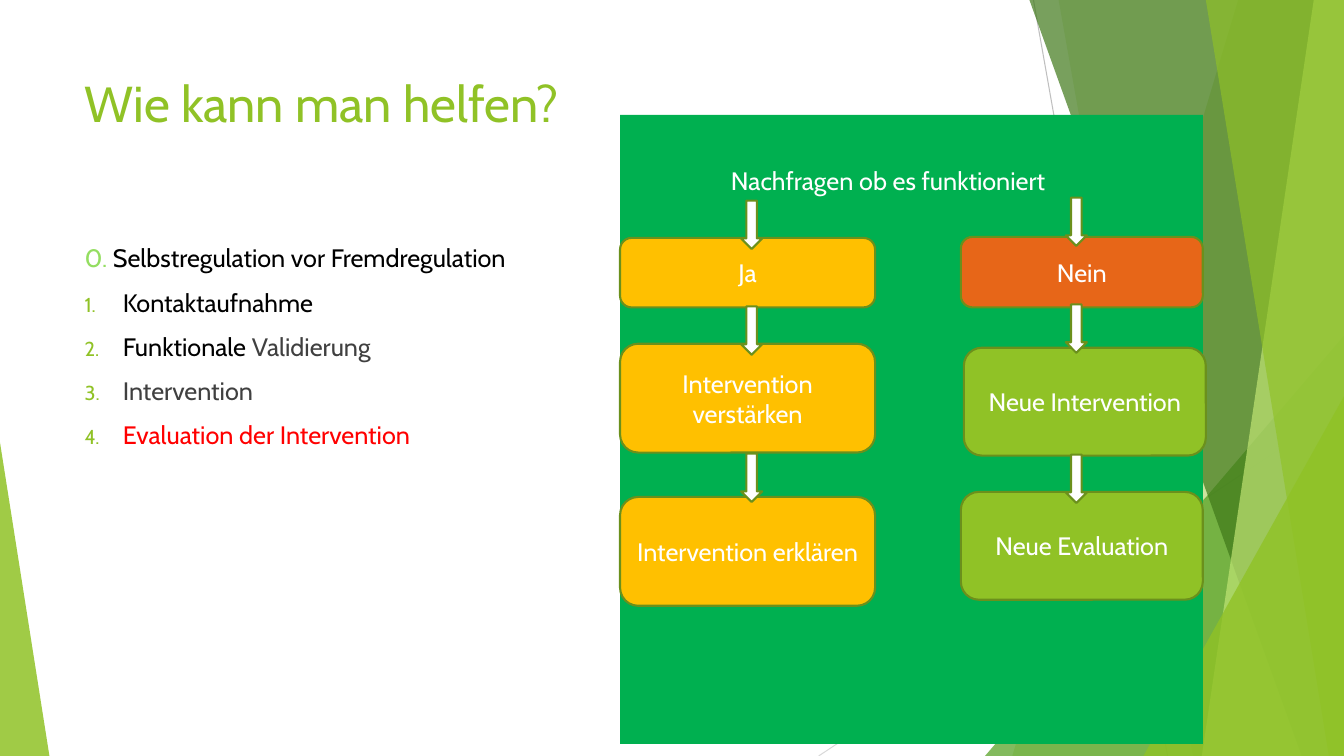
from pptx import Presentation
from pptx.dml.color import RGBColor
from pptx.enum.shapes import MSO_CONNECTOR as CONNECTOR, MSO_SHAPE as SHAPE
from pptx.enum.text import MSO_ANCHOR as ANCHOR, PP_ALIGN as ALIGN
from pptx.oxml.ns import qn
from pptx.util import Inches, Pt
from lxml.etree import SubElement

FONT = "Cabin"
LIME, OLIVE, AMBER, ORANGE, GREEN = "90C226", "6B901C", "FFC000", "E76618", "00B050"
WHITE, BLACK, GREY, RED = "FFFFFF", "000000", "404040", "FF0000"

# Content
title_text = "Wie kann man helfen?"
steps = [  # runs of (text, colour), numbered from the second line on
    [("0. ", "94DE61"), ("Selbstregulation vor Fremdregulation", BLACK)],
    [("Kontaktaufnahme", BLACK)],
    [("Funktionale ", BLACK), ("Validierung", GREY)],
    [("Intervention", GREY)],
    [("Evaluation der Intervention", RED)],
]
question = "Nachfragen ob es funktioniert"
boxes = [  # text, fill, left, top, width, height
    ("Ja", AMBER, 6.15, 2.36, 2.53, 0.69),
    ("Intervention verstärken", AMBER, 6.15, 3.41, 2.53, 1.08),
    ("Intervention erklären", AMBER, 6.15, 4.93, 2.53, 1.08),
    ("Nein", ORANGE, 9.53, 2.35, 2.4, 0.7),
    ("Neue Intervention", LIME, 9.56, 3.45, 2.4, 1.07),
    ("Neue Evaluation", LIME, 9.53, 4.88, 2.4, 1.07),
]
arrows = [(7.35, (1.99, 3.04, 4.5)), (10.57, (1.96, 3.02, 4.51))]  # left, tops

# Background scenery
rays = [  # x1, y1, x2, y2, colour
    (10.25, 0, 11.58, 7.5, "BFBFBF"),
    (13.33, 4.03, 8.12, 7.5, "D9D9D9"),
]
facets = [  # a band: top left x, bottom left x; a triangle: box and apex
    ("band", (12.28, 10.04), LIME, 30),
    ("band", (10.5, 11.83), LIME, 20),
    ("triangle", (9.77, 3.33, 3.56, 4.17, 1), "54A021", 72),
    ("band", (10.21, 12.91), "3F7819", 70),
    ("band", (13.03, 11.92), "C0E474", 70),
    ("band", (11.96, 13.18), LIME, 65),
    ("triangle", (11.34, 3.93, 1.99, 3.57, 1), LIME, 80),
    ("triangle", (0, 4.39, 0.49, 3.11, 0), LIME, 85),
]

prs = Presentation()
prs.slide_width, prs.slide_height = Inches(13.33), Inches(7.5)
slide = prs.slides.add_slide(prs.slide_layouts[5])
shapes = slide.shapes


def rgb(color):
    return RGBColor.from_string(color)


def paint(shape, fill, line=None, opacity=100):
    shape.shadow.inherit = False
    shape.fill.solid()
    shape.fill.fore_color.rgb = rgb(fill)
    if opacity < 100:
        tint = shape.fill._xPr.find(qn("a:solidFill"))[0]
        SubElement(tint, qn("a:alpha"), val=str(opacity * 1000))
    if line:
        shape.line.color.rgb = rgb(line)
        shape.line.width = Pt(1.5)
    else:
        shape.line.fill.background()


def add_shape(kind, left, top, width, height):
    return shapes.add_shape(kind, *map(Inches, (left, top, width, height)))


def style(paragraph, size, color=None):
    paragraph.font.name = FONT
    paragraph.font.size = Pt(size)
    if color:
        paragraph.font.color.rgb = rgb(color)


def number(paragraph):
    props = paragraph._p.get_or_add_pPr()
    props.set("marL", str(Inches(0.38)))
    props.set("indent", str(Inches(-0.38)))
    SubElement(SubElement(props, qn("a:buClr")), qn("a:srgbClr"), val=LIME)
    SubElement(props, qn("a:buSzPct"), val="80000")
    SubElement(props, qn("a:buFont"), typeface="+mj-lt")
    SubElement(props, qn("a:buAutoNum"), type="arabicPeriod")


# Scenery
for x1, y1, x2, y2, color in rays:
    ray = shapes.add_connector(CONNECTOR.STRAIGHT, *map(Inches, (x1, y1, x2, y2)))
    ray.line.color.rgb = rgb(color)
    ray.line.width = Pt(0.75)
    SubElement(ray._element.spPr, qn("a:effectLst"))

for kind, geometry, color, opacity in facets:
    if kind == "band":
        top_x, bottom_x = geometry
        outline = shapes.build_freeform(Inches(top_x), 0)
        corners = [(13.33, 0), (13.33, 7.5), (bottom_x, 7.5)]
        outline.add_line_segments([(Inches(x), Inches(y)) for x, y in corners])
        facet = outline.convert_to_shape()
    else:
        *frame, apex = geometry
        facet = add_shape(SHAPE.ISOSCELES_TRIANGLE, *frame)
        facet.adjustments[0] = apex
    paint(facet, color, opacity=opacity)

# Title
title = shapes.title
title.left, title.top, title.width, title.height = map(Inches, (0.74, 0.67, 9.4, 1.44))
title.text_frame.text = title_text
title.text_frame.vertical_anchor = ANCHOR.TOP
title.text_frame.paragraphs[0].alignment = ALIGN.LEFT
style(title.text_frame.paragraphs[0], 36, LIME)

# Numbered steps
steps_frame = shapes.add_textbox(*map(Inches, (0.74, 2.36, 5.3, 4.24))).text_frame
steps_frame.word_wrap = True
for index, runs in enumerate(steps):
    step = steps_frame.paragraphs[0] if index == 0 else steps_frame.add_paragraph()
    step.space_before = Pt(10)
    if index:
        number(step)
    style(step, 18)
    for text, color in runs:
        run = step.add_run()
        run.text = text
        run.font.color.rgb = rgb(color)

# Green panel with the question
panel = add_shape(SHAPE.RECTANGLE, 6.15, 1.14, 5.78, 6.24)
paint(panel, GREEN)
panel_frame = panel.text_frame
panel_frame.text = question
panel_frame.vertical_anchor = ANCHOR.TOP
panel_frame.margin_left, panel_frame.margin_top = Inches(1.1), Inches(0.5)
panel_frame.paragraphs[0].alignment = ALIGN.LEFT
style(panel_frame.paragraphs[0], 18, WHITE)

# Answer boxes and arrows
for text, color, *frame in boxes:
    box = add_shape(SHAPE.ROUNDED_RECTANGLE, *frame)
    paint(box, color, OLIVE)
    box.text_frame.text = text
    box.text_frame.vertical_anchor = ANCHOR.MIDDLE
    box.text_frame.paragraphs[0].alignment = ALIGN.CENTER
    style(box.text_frame.paragraphs[0], 18, WHITE)

for left, tops in arrows:
    for top in tops:
        paint(add_shape(SHAPE.DOWN_ARROW, left, top, 0.21, 0.48), WHITE, OLIVE)

prs.save("out.pptx")
